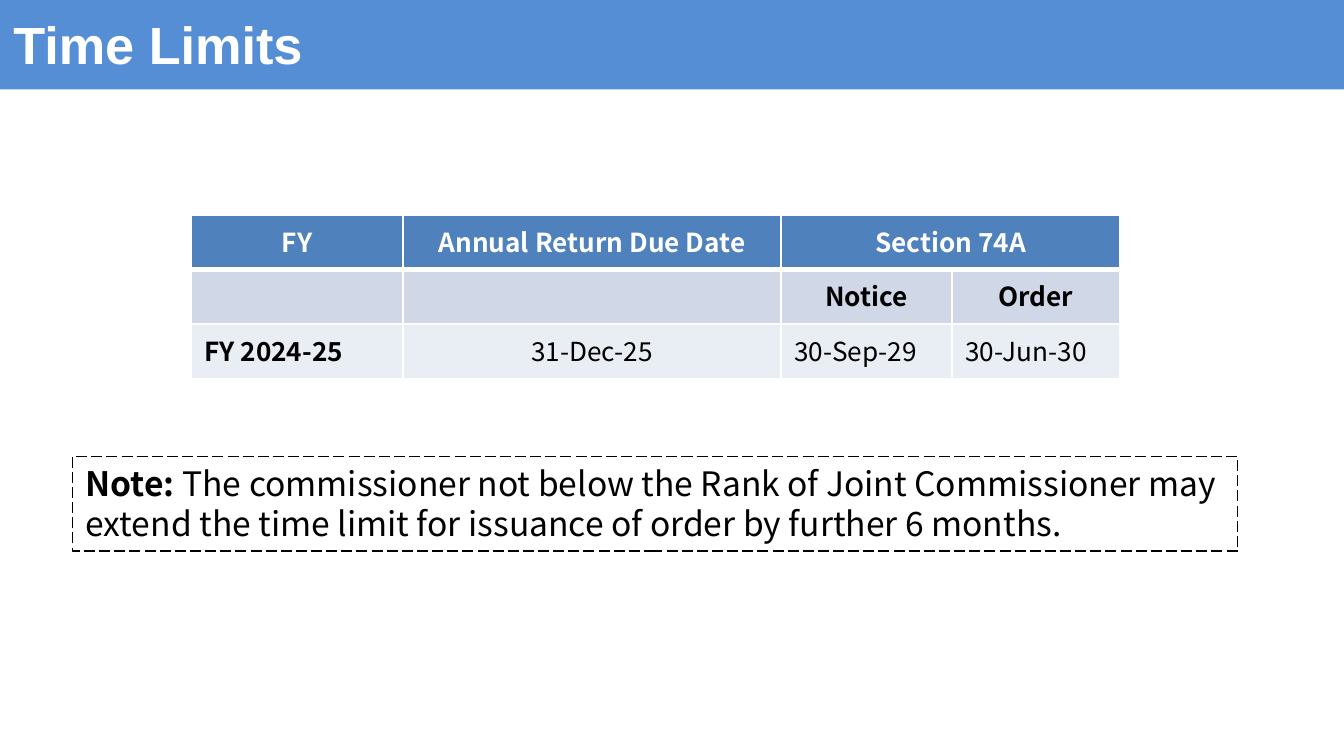
from lxml import etree
from pptx import Presentation
from pptx.dml.color import RGBColor
from pptx.enum.dml import MSO_LINE
from pptx.enum.shapes import MSO_SHAPE
from pptx.enum.text import MSO_ANCHOR, PP_ALIGN
from pptx.oxml.ns import qn
from pptx.util import Cm, Pt

LEFT, CENTER = PP_ALIGN.LEFT, PP_ALIGN.CENTER
MIDDLE, TOP = MSO_ANCHOR.MIDDLE, MSO_ANCHOR.TOP
RECT, LONG_DASH = MSO_SHAPE.RECTANGLE, MSO_LINE.LONG_DASH
WHITE = RGBColor(0xFF, 0xFF, 0xFF)
BLACK = RGBColor(0x00, 0x00, 0x00)
BANNER = RGBColor(0x55, 0x8E, 0xD5)
HEADER = RGBColor(0x4F, 0x81, 0xBD)
BAND_DARK = RGBColor(0xD0, 0xD8, 0xE8)
BAND_LIGHT = RGBColor(0xE9, 0xED, 0xF4)
BODY_FONT = "Noto Sans CJK KR"


def add_text(p, text, size=14, font=BODY_FONT, color=BLACK, bold=False, align=LEFT):
    p.alignment = align
    r = p.add_run()
    r.text = text
    r.font.size = Pt(size)
    r.font.name = font
    r.font.bold = bold
    r.font.color.rgb = color


def set_borders(cell, **widths):
    tcPr = cell._tc.get_or_add_tcPr()
    for i, side in enumerate(("L", "R", "T", "B")):
        ln = etree.Element(qn(f"a:ln{side}"), w=str(Pt(widths.get(side, 1))))
        fill = etree.SubElement(ln, qn("a:solidFill"))
        etree.SubElement(fill, qn("a:srgbClr"), val=str(WHITE))
        tcPr.insert(i, ln)


class Deck:
    """Holds the presentation style and the current slide."""

    def __init__(self, width, height):
        self.prs = Presentation()
        self.prs.slide_width, self.prs.slide_height = Cm(width), Cm(height)
        self.s = self.prs.slides.add_slide(self.prs.slide_layouts[5])

    def title(self, text, *box):
        sp = self.s.shapes.title
        sp.left, sp.top, sp.width, sp.height = map(Cm, box)
        sp.fill.solid()
        sp.fill.fore_color.rgb = BANNER
        tf = sp.text_frame
        tf.vertical_anchor = MIDDLE
        add_text(tf.paragraphs[0], text, size=28, font="Arial", color=WHITE, bold=True)

    def table(self, rows, fills, left, top, widths, row_height):
        height = row_height * len(rows)
        tbl = self.s.shapes.add_table(len(rows), len(widths), Cm(left), Cm(top),
                                      Cm(sum(widths)), Cm(height)).table
        for col, width in zip(tbl.columns, widths):
            col.width = Cm(width)
        for i, (row, fill) in enumerate(zip(rows, fills)):
            tbl.rows[i].height = Cm(row_height)
            for j, (text, bold, align) in enumerate(row):
                cell = tbl.cell(i, j)
                cell.fill.solid()
                cell.fill.fore_color.rgb = fill
                set_borders(cell, T=3 if i == 1 else 1, B=3 if i == 0 else 1)
                p = cell.text_frame.paragraphs[0]
                p.font.size = Pt(14)
                if text:
                    add_text(p, text, bold=bold, align=align,
                             color=WHITE if i == 0 else BLACK)
        return tbl

    def note(self, label, text, *box):
        sp = self.s.shapes.add_shape(RECT, *map(Cm, box))
        sp.shadow.inherit = False
        sp.fill.background()
        sp.line.color.rgb = BLACK
        sp.line.width = Pt(0.75)
        sp.line.dash_style = LONG_DASH
        tf = sp.text_frame
        tf.word_wrap = True
        tf.vertical_anchor = TOP
        p = tf.paragraphs[0]
        add_text(p, label, size=18, bold=True)
        add_text(p, text, size=18)


def main():
    deck = Deck(25.4, 14.28)
    deck.title("Time Limits", 0, -0.05, 25.4, 1.74)
    rows = [
        [(text, True, CENTER) for text in ("FY", "Annual Return Due Date", "Section 74A", "")],
        [(text, True, CENTER) for text in ("", "", "Notice", "Order")],
        [("FY 2024-25", True, LEFT), ("31-Dec-25", False, CENTER),
         ("30-Sep-29", False, LEFT), ("30-Jun-30", False, LEFT)],
    ]
    tbl = deck.table(rows, (HEADER, BAND_DARK, BAND_LIGHT), 3.61, 4.06,
                     (4.01, 7.14, 3.23, 3.18), 1.03)
    tbl.cell(0, 2).merge(tbl.cell(0, 3))
    deck.note("Note:", " The commissioner not below the Rank of Joint Commissioner may "
              "extend the time limit for issuance of order by further 6 months.",
              1.37, 8.62, 22.02, 1.79)
    deck.prs.save("out.pptx")


if __name__ == "__main__":
    main()
